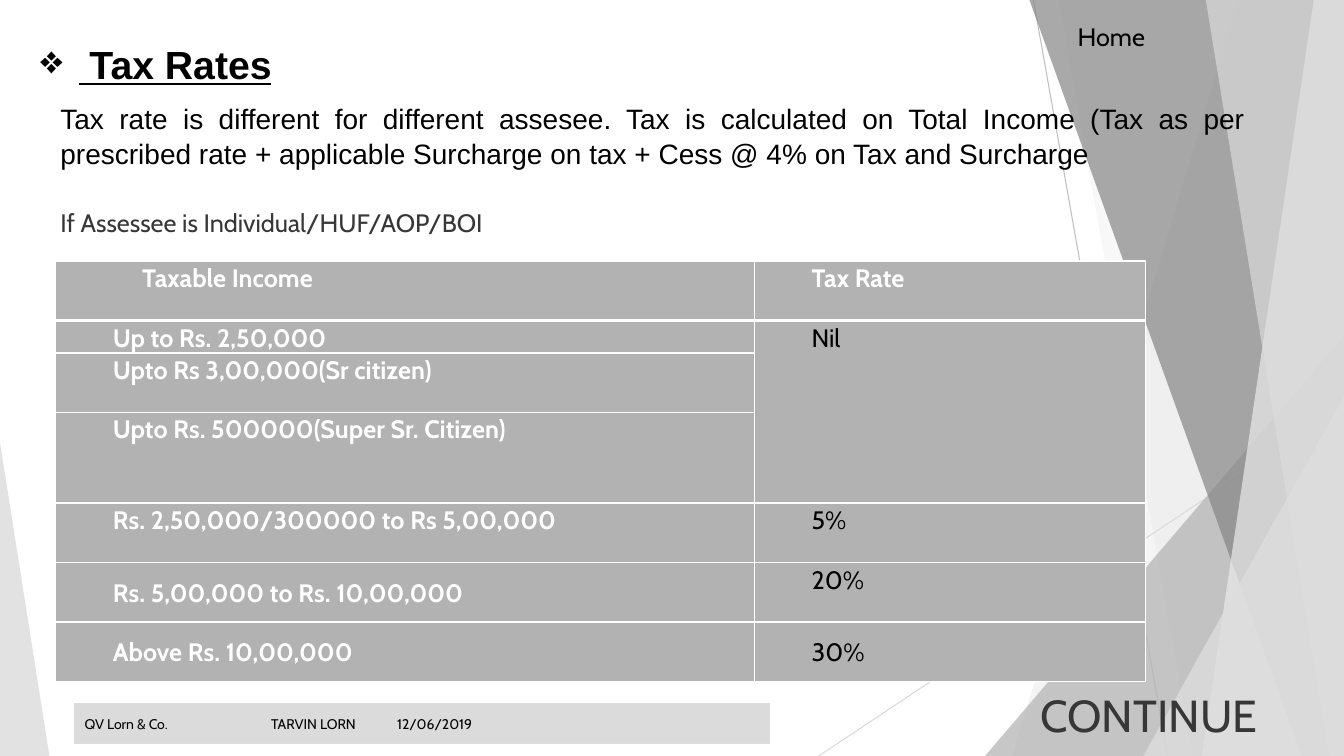
from lxml import etree
from pptx import Presentation
from pptx.dml.color import RGBColor
from pptx.enum.shapes import MSO_CONNECTOR, MSO_SHAPE
from pptx.enum.text import MSO_ANCHOR, PP_ALIGN
from pptx.oxml.ns import qn
from pptx.util import Inches, Pt

WHITE, BLACK, DARK, GREY, PALE = "FFFFFF", "000000", "373737", "B2B2B2", "DDDDDD"

# Each facet runs from its top-left x and bottom-left x to the right edge
FACETS_BEHIND = [(12.28, 10.04, PALE, 30), (10.5, 11.83, PALE, 20)]
FACETS_FRONT = [(10.21, 12.91, "858585", 70), (13.03, 11.92, "EBEBEB", 70),
                (11.96, 13.18, PALE, 65)]

COLUMN_WIDTHS = [6.93, 3.88]
ROW_HEIGHTS = [0.59, 0.29, 0.59, 0.9, 0.59, 0.59, 0.59]
TAX_RATES = [
    ("Taxable Income", "Tax Rate"),
    ("Up to Rs. 2,50,000", "Nil"),
    ("Upto Rs 3,00,000(Sr citizen)", ""),
    ("Upto Rs. 500000(Super Sr. Citizen)", ""),
    ("Rs. 2,50,000/300000 to Rs 5,00,000", "5%"),
    ("Rs. 5,00,000 to Rs. 10,00,000", "20%"),
    ("Above Rs. 10,00,000", "30%"),
]
MIDDLE_CELLS = {(5, 0), (6, 0), (6, 1)}


def rgb(value):
    return RGBColor.from_string(value)


def paint(shape, color, opacity, outline=None):
    shape.shadow.inherit = False
    shape.fill.solid()
    shape.fill.fore_color.rgb = rgb(color)
    srgb = shape.fill._xPr.find(qn("a:solidFill"))[0]
    etree.SubElement(srgb, qn("a:alpha"), val=str(opacity * 1000))
    if outline:
        shape.line.color.rgb = rgb(outline)
        shape.line.width = Pt(0.75)
    else:
        shape.line.fill.background()


def add_ray(slide, start, end, color):
    ray = slide.shapes.add_connector(
        MSO_CONNECTOR.STRAIGHT, *[Inches(v) for v in start + end])
    ray.line.color.rgb = rgb(color)
    ray.line.width = Pt(0.75)
    etree.SubElement(ray._element.spPr, qn("a:effectLst"))


def add_facet(slide, top_x, bottom_x, color, opacity):
    builder = slide.shapes.build_freeform(Inches(top_x), 0)
    corners = [(13.33, 0), (13.33, 7.5), (bottom_x, 7.5)]
    builder.add_line_segments([(Inches(x), Inches(y)) for x, y in corners])
    paint(builder.convert_to_shape(), color, opacity)


def add_triangle(slide, box, apex, color, opacity):
    triangle = slide.shapes.add_shape(
        MSO_SHAPE.ISOSCELES_TRIANGLE, *[Inches(v) for v in box])
    triangle.adjustments[0] = apex
    paint(triangle, color, opacity)


def add_run(paragraph, text, size, color, font="Cabin", bold=False):
    run = paragraph.add_run()
    run.text = text
    run.font.size = Pt(size)
    run.font.name = font
    run.font.bold = bold
    run.font.color.rgb = rgb(color)
    return run


def justify(paragraph, left, hanging=0, after=0):
    paragraph.alignment = PP_ALIGN.JUSTIFY
    paragraph.line_spacing = 1.07
    paragraph.space_before = Pt(0)
    paragraph.space_after = Pt(after)
    props = paragraph._p.get_or_add_pPr()
    props.set("marL", str(Inches(left)))
    props.set("indent", str(Inches(-hanging)))
    return props


def add_label(slide, box, text, size, color, font="Cabin"):
    label = slide.shapes.add_textbox(*[Inches(v) for v in box])
    label.text_frame.word_wrap = True
    paragraph = label.text_frame.paragraphs[0]
    add_run(paragraph, text, size, color, font)
    return paragraph


def add_heading(slide):
    heading = slide.shapes.title
    heading.left, heading.top = Inches(0.3), Inches(0.32)
    heading.width, heading.height = Inches(2.52), Inches(0.58)
    frame = heading.text_frame
    frame.word_wrap = False
    frame.vertical_anchor = MSO_ANCHOR.TOP
    paragraph = frame.paragraphs[0]
    props = justify(paragraph, 0.38, 0.38, 8)
    etree.SubElement(props, qn("a:buChar"), char="❖")
    add_run(paragraph, " Tax Rates", 28, BLACK, "Arial", True).font.underline = True


def set_borders(cell, top, bottom):
    props = cell._tc.get_or_add_tcPr()
    for side, width in (("lnL", 1), ("lnR", 1), ("lnT", top), ("lnB", bottom)):
        line = etree.SubElement(props, qn(f"a:{side}"), w=str(Pt(width)))
        fill = etree.SubElement(line, qn("a:solidFill"))
        etree.SubElement(fill, qn("a:srgbClr"), val=WHITE)


def add_rate_table(slide):
    frame = slide.shapes.add_table(
        len(TAX_RATES), 2, Inches(0.55), Inches(2.59), Inches(10.81), Inches(4.14))
    table = frame.table
    for column, width in zip(table.columns, COLUMN_WIDTHS):
        column.width = Inches(width)
    for row, height in zip(table.rows, ROW_HEIGHTS):
        row.height = Inches(height)
    table.cell(1, 1).merge(table.cell(3, 1))
    for r, texts in enumerate(TAX_RATES):
        for c, text in enumerate(texts):
            cell = table.cell(r, c)
            set_borders(cell, 3 if r == 1 else 1, 3 if r == 0 else 1)
            cell.fill.solid()
            cell.fill.fore_color.rgb = rgb(GREY)
            cell.margin_left = cell.margin_right = Inches(0.07)
            cell.margin_top = cell.margin_bottom = 0
            middle = (r, c) in MIDDLE_CELLS
            cell.vertical_anchor = MSO_ANCHOR.MIDDLE if middle else MSO_ANCHOR.TOP
            if not text:
                continue
            paragraph = cell.text_frame.paragraphs[0]
            justify(paragraph, 0.79 if (r, c) == (0, 0) else 0.5, after=8 * c)
            strong = r == 0 or c == 0
            add_run(paragraph, text, 18, WHITE if strong else BLACK, bold=strong)


def add_footer(slide):
    footer = slide.shapes.add_shape(
        MSO_SHAPE.RECTANGLE, Inches(0.74), Inches(6.98), Inches(6.89), Inches(0.4))
    paint(footer, GREY, 46, PALE)
    footer.text_frame.vertical_anchor = MSO_ANCHOR.MIDDLE
    paragraph = footer.text_frame.paragraphs[0]
    paragraph.alignment = PP_ALIGN.LEFT
    tabs = etree.SubElement(paragraph._p.get_or_add_pPr(), qn("a:tabLst"))
    for stop in (1.85, 3.1):
        etree.SubElement(tabs, qn("a:tab"), pos=str(Inches(stop)), algn="l")
    add_run(paragraph, "QV Lorn & Co.\tTARVIN LORN\t12/06/2019", 10, BLACK)


def main():
    prs = Presentation()
    prs.slide_width, prs.slide_height = Inches(13.33), Inches(7.5)
    slide = prs.slides.add_slide(prs.slide_layouts[5])

    # Faceted backdrop
    add_ray(slide, (10.25, 0), (11.58, 7.5), "BFBFBF")
    add_ray(slide, (13.33, 4.03), (8.12, 7.5), "D9D9D9")
    for facet in FACETS_BEHIND:
        add_facet(slide, *facet)
    add_triangle(slide, (9.77, 3.33, 3.56, 4.17), 1, GREY, 72)
    for facet in FACETS_FRONT:
        add_facet(slide, *facet)
    add_triangle(slide, (11.34, 3.93, 1.99, 3.57), 1, PALE, 80)
    add_triangle(slide, (0, 4.39, 0.49, 3.11), 0, PALE, 85)

    # Heading and introduction
    add_heading(slide)
    intro = add_label(
        slide, (0, 0.93, 12.45, 0.8),
        "Tax rate is different for different assesee. Tax is calculated on Total "
        "Income (Tax as per prescribed rate + applicable Surcharge on tax + "
        "Cess @ 4% on Tax and Surcharge", 20, BLACK, "Arial")
    justify(intro, 0.5, after=8)

    # Rates by income
    add_rate_table(slide)
    add_label(slide, (0.5, 2.01, 8.21, 0.71),
              "If Assessee is Individual/HUF/AOP/BOI", 18, DARK)

    # Navigation and footer
    add_label(slide, (10.22, 6.77, 3.53, 0.64), "CONTINUE", 32, DARK)
    add_footer(slide)
    add_label(slide, (10.59, 0.16, 2.07, 0.4), "Home", 18, BLACK)

    prs.save("out.pptx")


if __name__ == "__main__":
    main()
